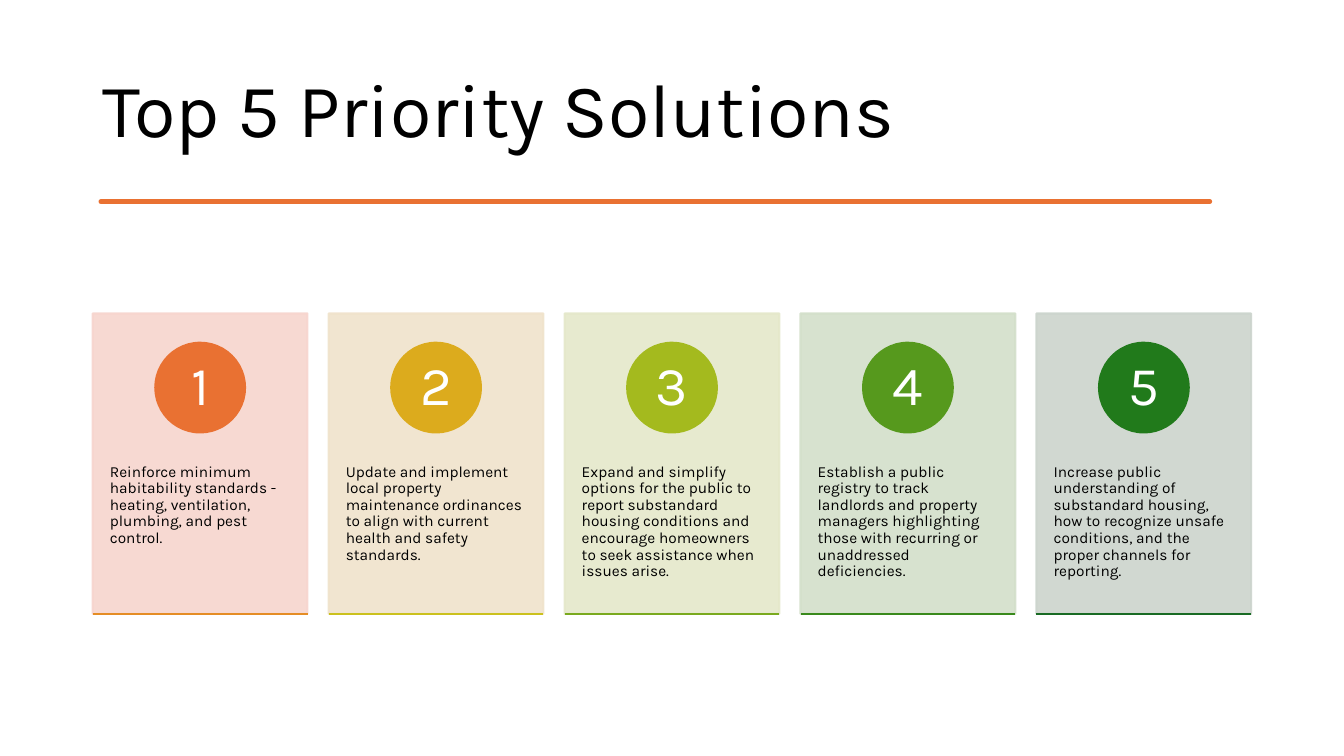
from dataclasses import dataclass

import lxml.etree
import pptx
import pptx.dml.color
import pptx.enum.shapes
import pptx.enum.text
import pptx.oxml.ns
import pptx.util

RGBColor = pptx.dml.color.RGBColor
Inches = pptx.util.Inches
Pt = pptx.util.Pt
Shape = pptx.enum.shapes.MSO_SHAPE
Align = pptx.enum.text.PP_ALIGN
Anchor = pptx.enum.text.MSO_ANCHOR
qn = pptx.oxml.ns.qn

FONT = "Karla"
BLACK = RGBColor(0x00, 0x00, 0x00)
WHITE = RGBColor(0xFF, 0xFF, 0xFF)
ORANGE = RGBColor(0xE9, 0x71, 0x32)
GOLD = RGBColor(0xDC, 0xAB, 0x1D)
LIME = RGBColor(0xA4, 0xBA, 0x1E)
GREEN = RGBColor(0x56, 0x99, 0x1D)
FOREST = RGBColor(0x21, 0x7A, 0x1B)
PINK = RGBColor(0xF7, 0xD5, 0xCE)
CREAM = RGBColor(0xF0, 0xE3, 0xCB)
PEAR = RGBColor(0xE5, 0xE8, 0xCA)
SAGE = RGBColor(0xD3, 0xDF, 0xCA)
MIST = RGBColor(0xCC, 0xD4, 0xCD)
AMBER = RGBColor(0xE5, 0x8D, 0x25)
YELLOW = RGBColor(0xCB, 0xC1, 0x1E)
OLIVE = RGBColor(0x7A, 0xAA, 0x1E)
GRASS = RGBColor(0x39, 0x8A, 0x1C)
PINE = RGBColor(0x19, 0x6B, 0x24)

LEFT, TOP = 0.92, 3.11
WIDTH, HEIGHT = 2.13, 2.98
STEP = 2.34
DISC = 0.89


@dataclass
class Card:
    text: str
    back: RGBColor
    disc: RGBColor
    base: RGBColor


@dataclass
class Knot:
    """Upper and lower edge of the brush stroke at one x."""
    x: float
    top: float
    low: float


CARDS = [
    Card("Reinforce minimum habitability standards - heating, ventilation, "
         "plumbing, and pest control.", PINK, ORANGE, AMBER),
    Card("Update and implement local property maintenance ordinances to align "
         "with current health and safety standards.", CREAM, GOLD, YELLOW),
    Card("Expand and simplify options for the public to report substandard "
         "housing conditions and encourage homeowners to seek assistance when "
         "issues arise.", PEAR, LIME, OLIVE),
    Card("Establish a public registry to track landlords and property managers "
         "highlighting those with recurring or unaddressed deficiencies.",
         SAGE, GREEN, GRASS),
    Card("Increase public understanding of substandard housing, how to "
         "recognize unsafe conditions, and the proper channels for reporting.",
         MIST, FOREST, PINE),
]

STROKE = [
    Knot(0.92, 2.04, 2.06), Knot(1.45, 2.03, 2.07), Knot(1.9, 2.04, 2.06),
    Knot(2.35, 2.03, 2.06), Knot(2.9, 2.04, 2.06), Knot(3.3, 2.04, 2.05),
    Knot(3.65, 2.03, 2.06), Knot(3.85, 2.04, 2.07), Knot(4.15, 2.04, 2.08),
    Knot(4.6, 2.04, 2.06), Knot(5.0, 2.03, 2.06), Knot(5.5, 2.04, 2.07),
    Knot(5.85, 2.04, 2.06), Knot(6.05, 2.03, 2.06), Knot(6.4, 2.03, 2.06),
    Knot(6.9, 2.02, 2.07), Knot(7.2, 2.03, 2.06), Knot(7.7, 2.05, 2.06),
    Knot(8.1, 2.03, 2.06), Knot(8.4, 2.04, 2.08), Knot(8.8, 2.04, 2.07),
    Knot(9.3, 2.03, 2.06), Knot(9.8, 2.04, 2.06), Knot(10.3, 2.04, 2.06),
    Knot(10.9, 2.03, 2.07), Knot(11.35, 2.03, 2.08), Knot(11.8, 2.04, 2.06),
    Knot(12.32, 2.04, 2.06),
]


def write(shape, text: str, *, size: float, color: RGBColor = BLACK,
          align=Align.LEFT, anchor=Anchor.TOP, pad=(0.1, 0.05)) -> None:
    frame = shape.text_frame
    frame.word_wrap = True
    frame.vertical_anchor = anchor
    frame.margin_left = frame.margin_right = Inches(pad[0])
    frame.margin_top = frame.margin_bottom = Inches(pad[1])
    para = frame.paragraphs[0]
    para.alignment = align
    para.line_spacing = 0.9
    run = para.add_run()
    run.text = text
    run.font.name = FONT
    run.font.size = Pt(size)
    run.font.color.rgb = color


def box(slide, x: float, y: float, w: float, h: float):
    return slide.shapes.add_textbox(Inches(x), Inches(y), Inches(w), Inches(h))


def paint(shape, color: RGBColor, line: float = 1.5) -> None:
    shape.shadow.inherit = False
    shape.fill.solid()
    shape.fill.fore_color.rgb = color
    shape.line.color.rgb = color
    shape.line.width = Pt(line)


def fade(shape, share: int) -> None:
    """Set the opacity of fill and line, in percent."""
    for color in shape._element.spPr.iter(qn("a:srgbClr")):
        lxml.etree.SubElement(color, qn("a:alpha"), val=str(share * 1000))


def draw_brush(slide) -> None:
    edge = [(k.x, k.top) for k in STROKE]
    edge += [(k.x, k.low) for k in reversed(STROKE)]
    pen = slide.shapes.build_freeform(*edge[0], scale=Inches(1))
    pen.add_line_segments(edge[1:], close=True)
    paint(pen.convert_to_shape(), ORANGE, 3.25)


def draw_card(slide, card: Card, rank: int) -> None:
    x = LEFT + (rank - 1) * STEP
    back = slide.shapes.add_shape(
        Shape.RECTANGLE, Inches(x), Inches(TOP), Inches(WIDTH), Inches(HEIGHT))
    paint(back, card.back)
    fade(back, 90)

    write(box(slide, x, 4.24, WIDTH, 1.79), card.text, size=11,
          pad=(0.17, 0.36))

    disc = slide.shapes.add_shape(
        Shape.OVAL, Inches(x + (WIDTH - DISC) / 2), Inches(3.4),
        Inches(DISC), Inches(DISC))
    paint(disc, card.disc)
    write(disc, str(rank), size=39, color=WHITE, align=Align.CENTER,
          anchor=Anchor.MIDDLE, pad=(0.07, 0.01))

    base = slide.shapes.add_connector(
        pptx.enum.shapes.MSO_CONNECTOR.STRAIGHT, Inches(x),
        Inches(TOP + HEIGHT), Inches(x + WIDTH), Inches(TOP + HEIGHT))
    base.line.color.rgb = card.base
    base.line.width = Pt(1.5)
    lxml.etree.SubElement(base._element.spPr, qn("a:effectLst"))


def main() -> None:
    deck = pptx.Presentation()
    deck.slide_width = Inches(13.33)
    deck.slide_height = Inches(7.5)
    slide = deck.slides.add_slide(deck.slide_layouts[6])
    write(box(slide, LEFT, 0.4, 11.5, 1.45), "Top 5 Priority Solutions",
          size=54, anchor=Anchor.MIDDLE)
    draw_brush(slide)
    for rank, card in enumerate(CARDS, 1):
        draw_card(slide, card, rank)
    deck.save("out.pptx")


if __name__ == "__main__":
    main()
